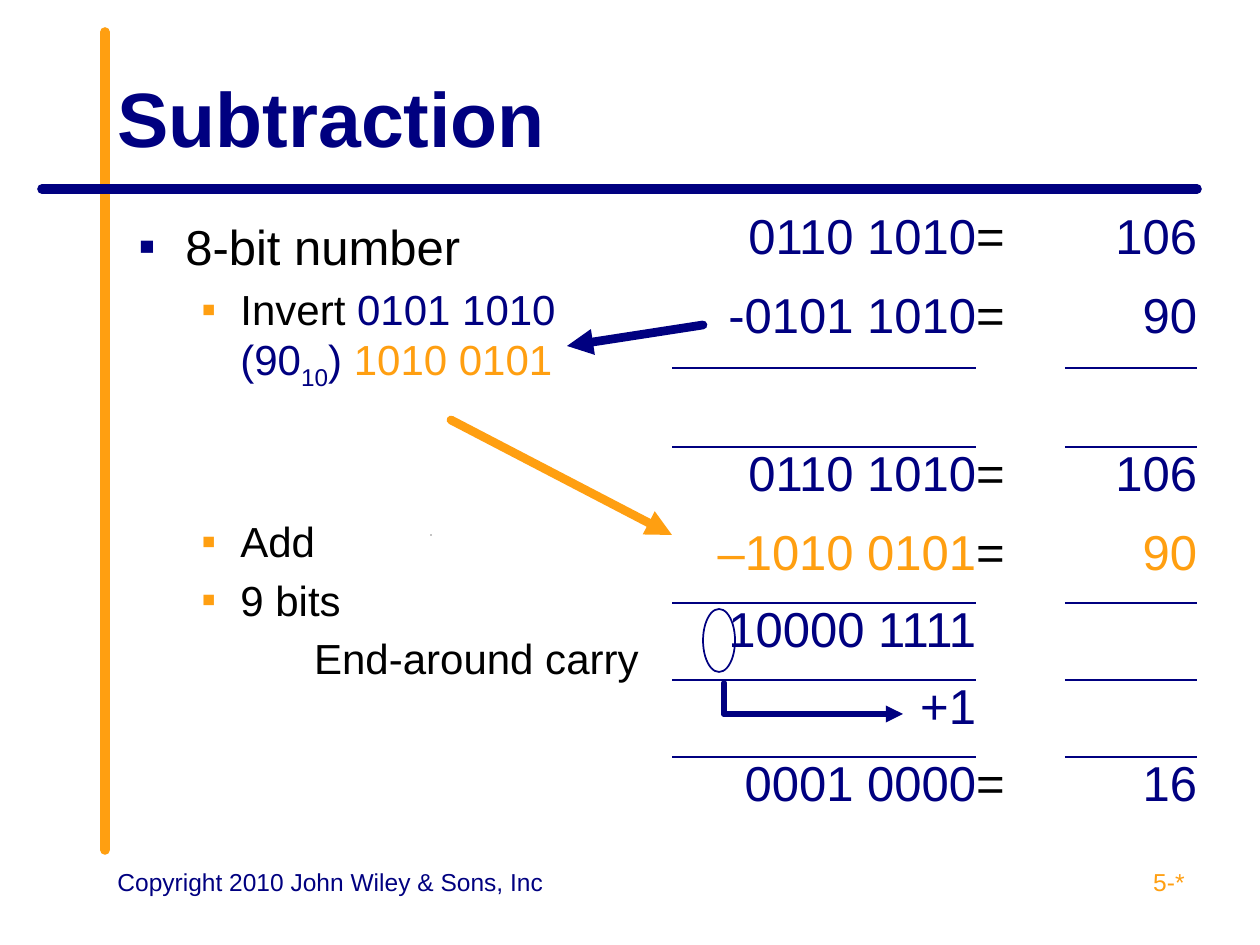
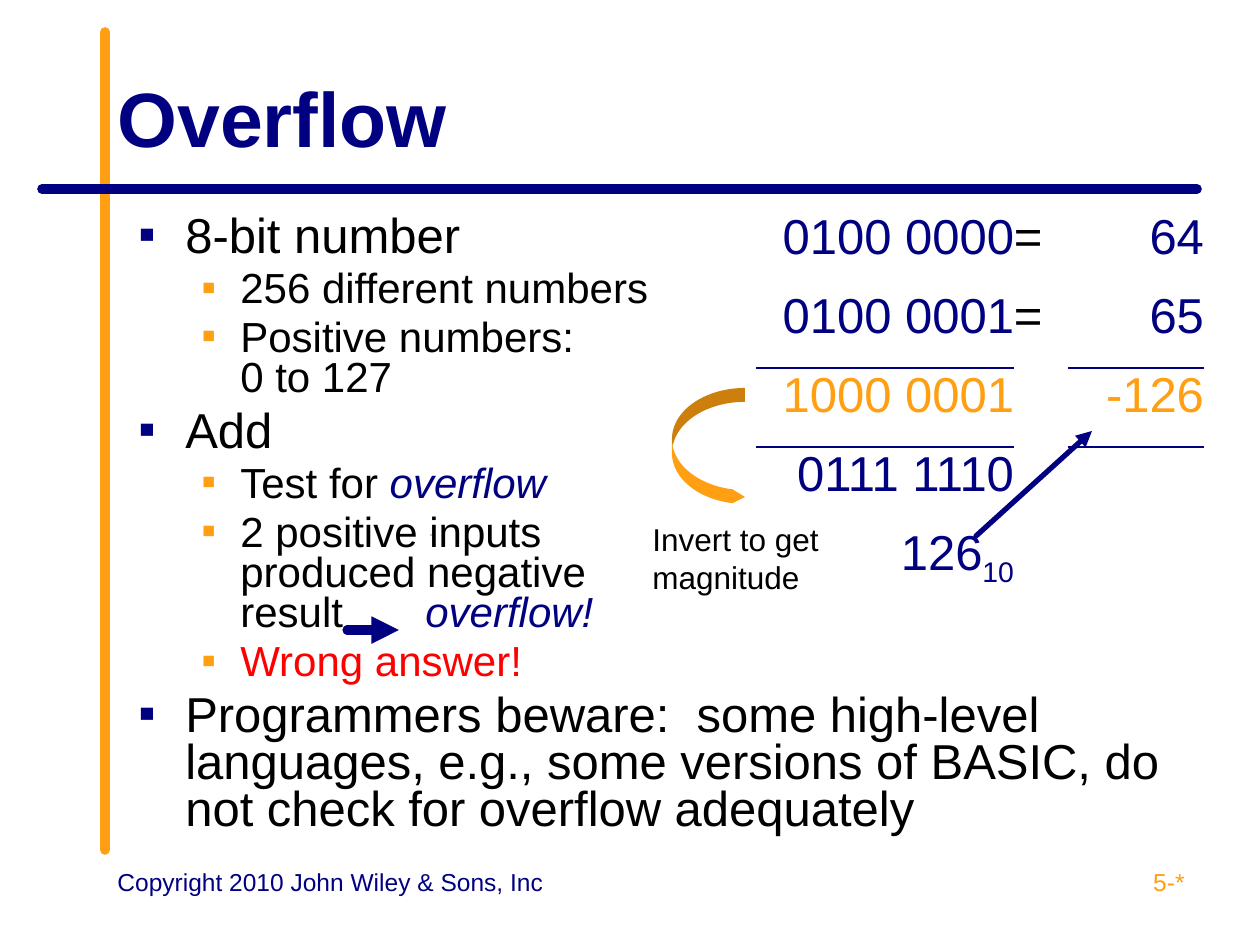
"""Build two slides on binary subtraction and overflow."""
from lxml.etree import SubElement
from pptx import Presentation
from pptx.dml.color import RGBColor
from pptx.enum.shapes import MSO_CONNECTOR as Connector, MSO_SHAPE as Shape
from pptx.enum.text import MSO_ANCHOR as Anchor, PP_ALIGN as Align
from pptx.oxml.ns import qn
from pptx.util import Emu, Pt

NAVY = RGBColor(0x00, 0x00, 0x80)
ORANGE = RGBColor(0xFF, 0x9F, 0x11)
BLACK = RGBColor(0x00, 0x00, 0x00)
RED = RGBColor(0xFF, 0x00, 0x00)
FONT = "Arial"
PX_PER_INCH = 126
LEVELS = [
    dict(size=28, margin=47, indent=-47, color=NAVY, before=5.6),
    dict(size=24, margin=102, indent=-39, color=ORANGE, before=4.8),
]


def px(length):
    return Emu(round(length * 914400 / PX_PER_INCH))


def add_span(para, text, size=28, color=BLACK, bold=False, italic=False, subscript=False):
    for index, line in enumerate(text.split("\n")):
        if index:
            para.add_line_break()
        span = para.add_run()
        span.text = line
        font = span.font
        font.name, font.size, font.bold, font.italic = FONT, Pt(size), bold, italic
        font.color.rgb = color
        if subscript:
            font._element.set("baseline", "-25000")


def add_box(page, left, top, width, height):
    box = page.shapes.add_textbox(px(left), px(top), px(width), px(height))
    box.text_frame.word_wrap = True
    return box.text_frame


def add_label(page, place, text, align=Align.LEFT, anchor=Anchor.TOP, **style):
    frame = add_box(page, *place)
    frame.vertical_anchor = anchor
    para = frame.paragraphs[0]
    para.alignment = align
    add_span(para, text, **style)


def add_item(frame, level, *spans, before=None, spacing=None, bullet=True,
             align=Align.LEFT, tabs=()):
    look = LEVELS[level]
    first = not frame.paragraphs[0].runs
    para = frame.paragraphs[0] if first else frame.add_paragraph()
    para.level = level
    props = para._p.get_or_add_pPr()
    props.set("marL", str(px(look["margin"])))
    props.set("indent", str(px(look["indent"])))
    if bullet:
        tint = SubElement(props, qn("a:buClr"))
        SubElement(tint, qn("a:srgbClr"), val=str(look["color"]))
        SubElement(props, qn("a:buFont"), typeface=FONT)
        SubElement(props, qn("a:buChar"), char="▪")
    else:
        SubElement(props, qn("a:buNone"))
    if tabs:
        stops = SubElement(props, qn("a:tabLst"))
        for stop in tabs:
            SubElement(stops, qn("a:tab"), pos=str(px(stop)), algn="l")
    para.alignment = align
    if spacing:
        para.line_spacing = spacing
    if not first:
        para.space_before = Pt(before or look["before"])
    for span in spans:
        text, style = (span, {}) if isinstance(span, str) else span
        add_span(para, text, size=look["size"], **style)


def add_line(page, start, end, color, weight, arrow=True):
    line = page.shapes.add_connector(Connector.STRAIGHT, *map(px, start + end))
    line.line.color.rgb = color
    line.line.width = Pt(weight)
    stroke = line.line._get_or_add_ln()
    stroke.set("cap", "rnd")
    SubElement(stroke, qn("a:round"))
    if arrow:
        SubElement(stroke, qn("a:tailEnd"), type="triangle")
    SubElement(line._element.spPr, qn("a:effectLst"))


def set_borders(cell, top, bottom):
    props = cell._tc.get_or_add_tcPr()
    for side, ruled in (("L", False), ("R", False), ("T", top), ("B", bottom)):
        border = SubElement(props, qn(f"a:ln{side}"), w=str(Pt(1.5)))
        if ruled:
            fill = SubElement(border, qn("a:solidFill"))
            SubElement(fill, qn("a:srgbClr"), val=str(NAVY))
        else:
            SubElement(border, qn("a:noFill"))


def add_sums(page, left, widths, heights, rows, ruled, orange_row):
    """Draw right-aligned sums with a rule below each ruled row, except at the equals sign."""
    table = page.shapes.add_table(len(rows), len(widths), px(left), px(210),
                                  px(sum(widths)), px(sum(heights))).table
    table.first_row = table.horz_banding = False
    for column, width in zip(table.columns, widths):
        column.width = px(width)
    for row, height in zip(table.rows, heights):
        row.height = px(height)
    for r, texts in enumerate(rows):
        for c, text in enumerate(texts):
            cell = table.cell(r, c)
            cell.margin_left = cell.margin_right = cell.margin_top = cell.margin_bottom = 0
            number = c != 1
            set_borders(cell, number and r - 1 in ruled, number and r in ruled)
            cell.fill.background()
            para = cell.text_frame.paragraphs[0]
            para.alignment = Align.RIGHT if number else Align.LEFT
            color = BLACK if not number else ORANGE if r == orange_row else NAVY
            if text:
                add_span(para, text, color=color)
    return table


def add_page(deck, title):
    page = deck.slides.add_slide(deck.slide_layouts[6])
    add_line(page, (105, 850), (105, 32), ORANGE, 5.5, arrow=False)
    add_line(page, (1197, 189), (42, 189), NAVY, 5.5, arrow=False)
    add_label(page, (105, 38, 1092, 158), title, anchor=Anchor.MIDDLE,
              size=44, color=NAVY, bold=True)
    add_label(page, (903, 861, 294, 66), "5-*", align=Align.RIGHT, size=14, color=ORANGE)
    add_label(page, (105, 861, 462, 66), "Copyright 2010 John Wiley & Sons, Inc",
              size=14, color=NAVY)
    add_line(page, (431, 535), (431, 535), BLACK, 0.75)
    return page


def build_subtraction(deck):
    page = add_page(deck, "Subtraction")
    navy = dict(color=NAVY)
    body = add_box(page, 126, 210, 525, 624)
    add_item(body, 0, "8-bit number")
    add_item(body, 1, "Invert ", ("0101 1010 (90", navy),
             ("10", dict(color=NAVY, subscript=True)), (") ", navy),
             ("1010 0101", dict(color=ORANGE)))
    add_item(body, 1, "Add", before=71)
    add_item(body, 1, "9 bits")
    add_item(body, 1, "End-around carry", bullet=False, align=Align.RIGHT)

    rows = [
        ("0110 1010", "=", "106"),
        ("-0101 1010", "=", "90"),
        ("", "", ""),
        ("0110 1010", "=", "106"),
        ("–1010 0101", "=", "90"),
        ("10000 1111", "", ""),
        ("+1", "", ""),
        ("0001 0000", "=", "16"),
    ]
    add_sums(page, 672, [304, 89, 132], [79] * 4 + [77] * 4, rows,
             ruled={1, 2, 4, 5, 6}, orange_row=4)

    add_line(page, (451, 420), (672, 535), ORANGE, 5)
    carry = page.shapes.add_shape(Shape.OVAL, px(703), px(609), px(32), px(63))
    carry.shadow.inherit = False
    carry.fill.background()
    carry.line.color.rgb = NAVY
    carry.line.width = Pt(1)
    add_line(page, (724, 683), (724, 714), NAVY, 3.25, arrow=False)
    add_line(page, (724, 714), (903, 714), NAVY, 3.25)
    add_line(page, (703, 325), (567, 346), NAVY, 5)


def build_overflow(deck):
    page = add_page(deck, "Overflow")
    emphasis = dict(color=NAVY, italic=True)
    body = add_box(page, 126, 210, 1061, 651)
    items = [
        (0, ["8-bit number"]),
        (1, ["256 different numbers"]),
        (1, ["Positive numbers:\n0 to 127"]),
        (0, ["Add"]),
        (1, ["Test for ", ("overflow", emphasis)]),
        (1, ["2 positive inputs\nproduced negative\nresult\t", ("overflow!", emphasis)]),
        (1, [("Wrong answer!", dict(color=RED))]),
        (0, ["Programmers beware:  some high-level languages, e.g., some versions "
             "of BASIC, do not check for overflow adequately"]),
    ]
    for level, spans in items:
        tabs = (185, 287) if "\t" in spans[0] else ()
        add_item(body, level, *spans, spacing=0.8, tabs=tabs)

    rows = [
        ("0100 0000", "=", "64"),
        ("0100 0001", "=", "65"),
        ("1000 0001", "", "-126"),
        ("0111 1110", "", ""),
        ("126", "", ""),
    ]
    sums = add_sums(page, 756, [258, 54, 136], [79] * 4 + [77], rows,
                    ruled={1, 2}, orange_row=2)
    add_span(sums.cell(4, 0).text_frame.paragraphs[0], "10", color=NAVY, subscript=True)

    invert = page.shapes.add_shape(Shape.CURVED_RIGHT_ARROW, px(672), px(388), px(73), px(116))
    invert.shadow.inherit = False
    invert.fill.solid()
    invert.fill.fore_color.rgb = ORANGE
    invert.line.fill.background()
    for index, value in enumerate((0.25, 0.19, 0.17)):
        invert.adjustments[index] = value
    add_label(page, (640, 514, 199, 88), "Invert to get magnitude", size=18)
    add_line(page, (976, 536), (1092, 431), NAVY, 3)
    add_line(page, (347, 630), (399, 630), NAVY, 5.25)


def main():
    deck = Presentation()
    deck.slide_width, deck.slide_height = px(1260), px(945)
    build_subtraction(deck)
    build_overflow(deck)
    deck.save("out.pptx")


if __name__ == "__main__":
    main()
